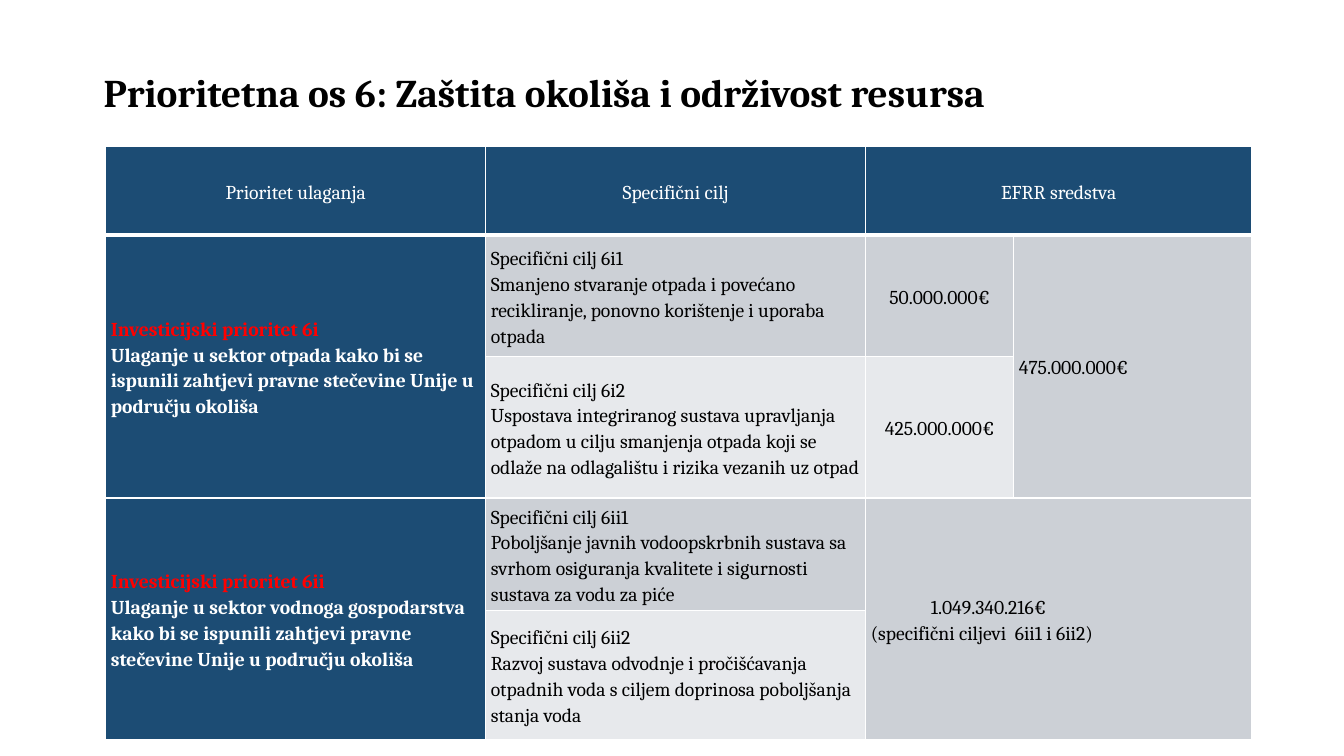
import pptx
import pptx.util
import pptx.dml.color
import pptx.enum.text
import pptx.oxml
import pptx.oxml.ns
from dataclasses import dataclass

Pt = pptx.util.Pt
RGB = pptx.dml.color.RGBColor.from_string
ALIGN = pptx.enum.text.PP_ALIGN
ANCHOR = pptx.enum.text.MSO_ANCHOR


@dataclass(frozen=True)
class Theme:
    font: str = "Cambria"
    title_size: float = 28
    body_size: float = 14
    white: str = "FFFFFF"
    black: str = "000000"
    red: str = "FF0000"
    navy: str = "1C4C74"
    dark_band: str = "CCD0D6"
    light_band: str = "E7E9EC"
    border: float = 1
    header_border: float = 3


THEME = Theme()
COLUMN_WIDTHS = (271.4, 271.4, 105.8, 170)
ROW_HEIGHTS = (63.4, 87.1, 100.8, 80.6, 92.2)
HEADINGS = ("Prioritet ulaganja", "Specifični cilj", "EFRR sredstva")

# First row, investment priority, description
PRIORITIES = (
    (1, "Investicijski prioritet 6i",
     "Ulaganje u sektor otpada kako bi se ispunili zahtjevi pravne stečevine "
     "Unije u području okoliša"),
    (3, "Investicijski prioritet 6ii",
     "Ulaganje u sektor vodnoga gospodarstva kako bi se ispunili zahtjevi pravne "
     "stečevine Unije u području okoliša"),
)

# Specific objective and description, one pair for each body row
OBJECTIVES = (
    ("Specifični cilj 6i1",
     "Smanjeno stvaranje otpada i povećano recikliranje, ponovno korištenje i "
     "uporaba otpada"),
    ("Specifični cilj 6i2",
     "Uspostava integriranog sustava upravljanja otpadom u cilju smanjenja otpada "
     "koji se odlaže na odlagalištu i rizika vezanih uz otpad"),
    ("Specifični cilj 6ii1",
     "Poboljšanje javnih vodoopskrbnih sustava sa svrhom osiguranja kvalitete i "
     "sigurnosti sustava za vodu za piće"),
    ("Specifični cilj 6ii2",
     "Razvoj sustava odvodnje i pročišćavanja otpadnih voda s ciljem doprinosa "
     "poboljšanja stanja voda"),
)


def add_run(paragraph, text, size, color, bold=False):
    run = paragraph.add_run()
    run.text = text
    run.font.name = THEME.font
    run.font.size = Pt(size)
    run.font.bold = bold
    run.font.color.rgb = RGB(color)


def set_borders(cell, widths):
    """Draw white cell borders, given widths for L, R, T and B."""
    properties = cell._tc.get_or_add_tcPr()
    for index, (side, width) in enumerate(widths.items()):
        line = pptx.oxml.parse_xml(
            f'<a:ln{side} {pptx.oxml.ns.nsdecls("a")} w="{Pt(width)}"><a:solidFill>'
            f'<a:srgbClr val="{THEME.white}"/></a:solidFill></a:ln{side}>')
        properties.insert(index, line)


def write_cell(cell, lines, fill, colors, align=ALIGN.LEFT, bold=False):
    cell.fill.solid()
    cell.fill.fore_color.rgb = RGB(fill)
    frame = cell.text_frame
    for index, (text, color) in enumerate(zip(lines, colors)):
        paragraph = frame.add_paragraph() if index else frame.paragraphs[0]
        paragraph.alignment = align
        paragraph.line_spacing = 1.15
        add_run(paragraph, text, THEME.body_size, color, bold)


def add_title(slide, left, top, width, height):
    frame = slide.shapes.add_textbox(Pt(left), Pt(top), Pt(width), Pt(height)).text_frame
    frame.word_wrap = True
    frame.vertical_anchor = ANCHOR.MIDDLE
    frame.margin_top = Pt(34)
    paragraph = frame.paragraphs[0]
    paragraph.line_spacing = 0.9
    add_run(paragraph, "Prioritetna os 6: Zaštita okoliša i održivost resursa",
            THEME.title_size, THEME.black, bold=True)


def format_grid(table):
    """Set margins, anchors and borders of every cell."""
    for row in range(len(ROW_HEIGHTS)):
        for column in range(len(COLUMN_WIDTHS)):
            cell = table.cell(row, column)
            cell.margin_left = cell.margin_right = Pt(3.6)
            cell.margin_top, cell.margin_bottom = Pt(0.7), Pt(0)
            cell.vertical_anchor = ANCHOR.MIDDLE
            set_borders(cell, {
                "L": THEME.border,
                "R": THEME.border,
                "T": THEME.header_border if row == 1 else THEME.border,
                "B": THEME.header_border if row == 0 else THEME.border,
            })


def add_funding_table(slide, left, top):
    frame = slide.shapes.add_table(
        len(ROW_HEIGHTS), len(COLUMN_WIDTHS), Pt(left), Pt(top),
        Pt(sum(COLUMN_WIDTHS)), Pt(sum(ROW_HEIGHTS)))
    table = frame.table
    table.horz_banding = False
    for column, width in zip(table.columns, COLUMN_WIDTHS):
        column.width = Pt(width)
    for row, height in zip(table.rows, ROW_HEIGHTS):
        row.height = Pt(height)

    # Merged areas: first cell and last cell
    for first, last in (((0, 2), (0, 3)), ((1, 0), (2, 0)), ((1, 3), (2, 3)),
                        ((3, 0), (4, 0)), ((3, 2), (4, 3))):
        table.cell(*first).merge(table.cell(*last))

    # Headings
    for column, heading in enumerate(HEADINGS):
        write_cell(table.cell(0, column), [heading], THEME.navy, [THEME.white],
                   ALIGN.CENTER)

    # Investment priorities
    for row, name, description in PRIORITIES:
        write_cell(table.cell(row, 0), [name, description], THEME.navy,
                   [THEME.red, THEME.white], bold=True)

    # Specific objectives
    bands = (THEME.dark_band, THEME.light_band)
    for index, objective in enumerate(OBJECTIVES):
        write_cell(table.cell(index + 1, 1), objective, bands[index % 2],
                   [THEME.black] * 2)

    # Funds
    for row, amount, band in zip((1, 2), ("50.000.000€", "425.000.000€"), bands):
        write_cell(table.cell(row, 2), [amount], band, [THEME.black], ALIGN.CENTER)
    write_cell(table.cell(1, 3), ["475.000.000€"], THEME.dark_band, [THEME.black])
    water_funds = table.cell(3, 2)
    write_cell(water_funds, ["1.049.340.216€", "(specifični ciljevi  6ii1 i 6ii2)"],
               THEME.dark_band, [THEME.black] * 2)
    amount_paragraph = water_funds.text_frame.paragraphs[0]
    amount_paragraph._p.get_or_add_pPr().set("marL", str(Pt(43)))

    format_grid(table)


def main():
    presentation = pptx.Presentation()
    presentation.slide_width, presentation.slide_height = Pt(960), Pt(540)
    slide = presentation.slides.add_slide(presentation.slide_layouts[6])
    add_title(slide, 67, 0, 828, 104.4)
    add_funding_table(slide, 75.6, 104.4)
    presentation.save("out.pptx")


if __name__ == "__main__":
    main()
